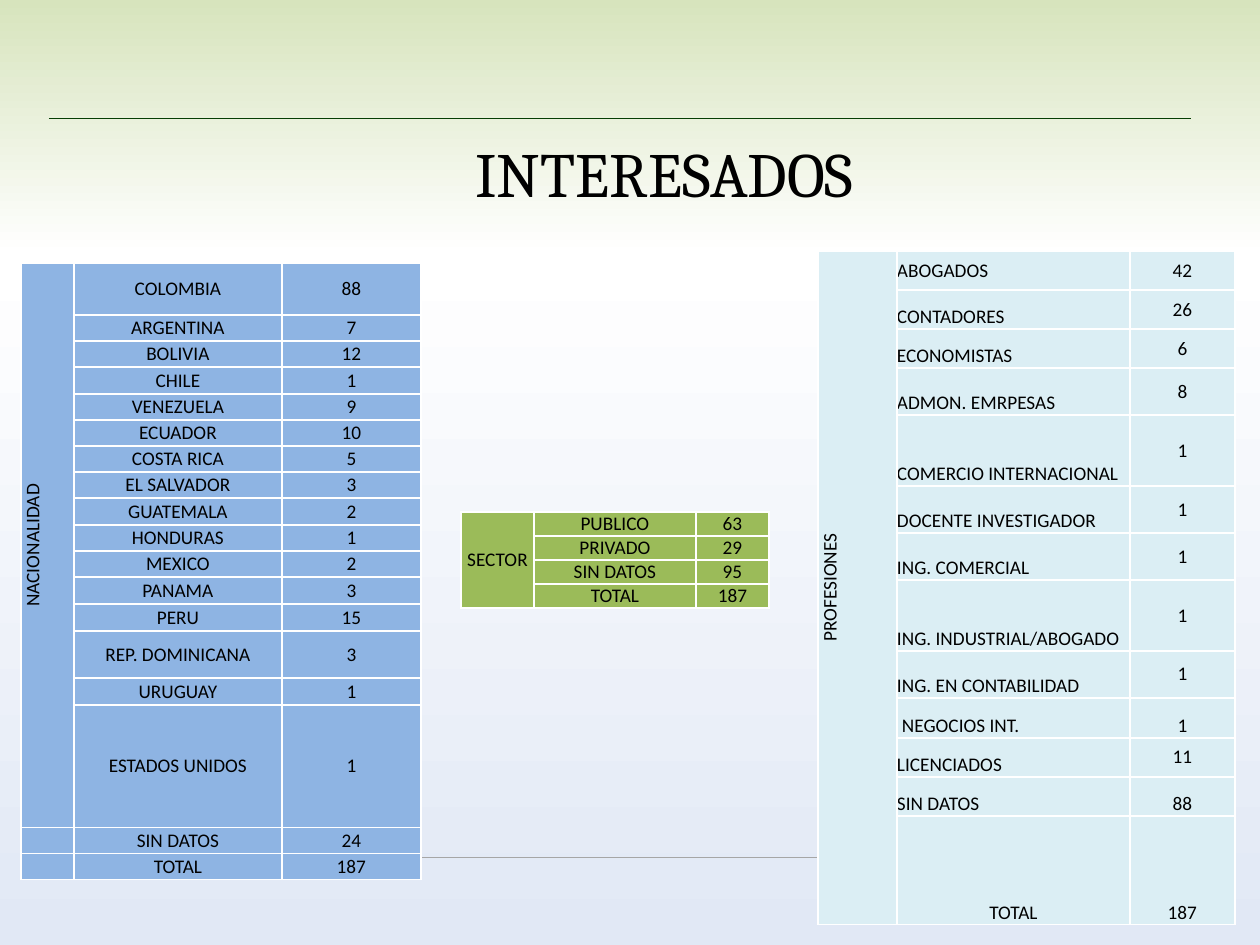
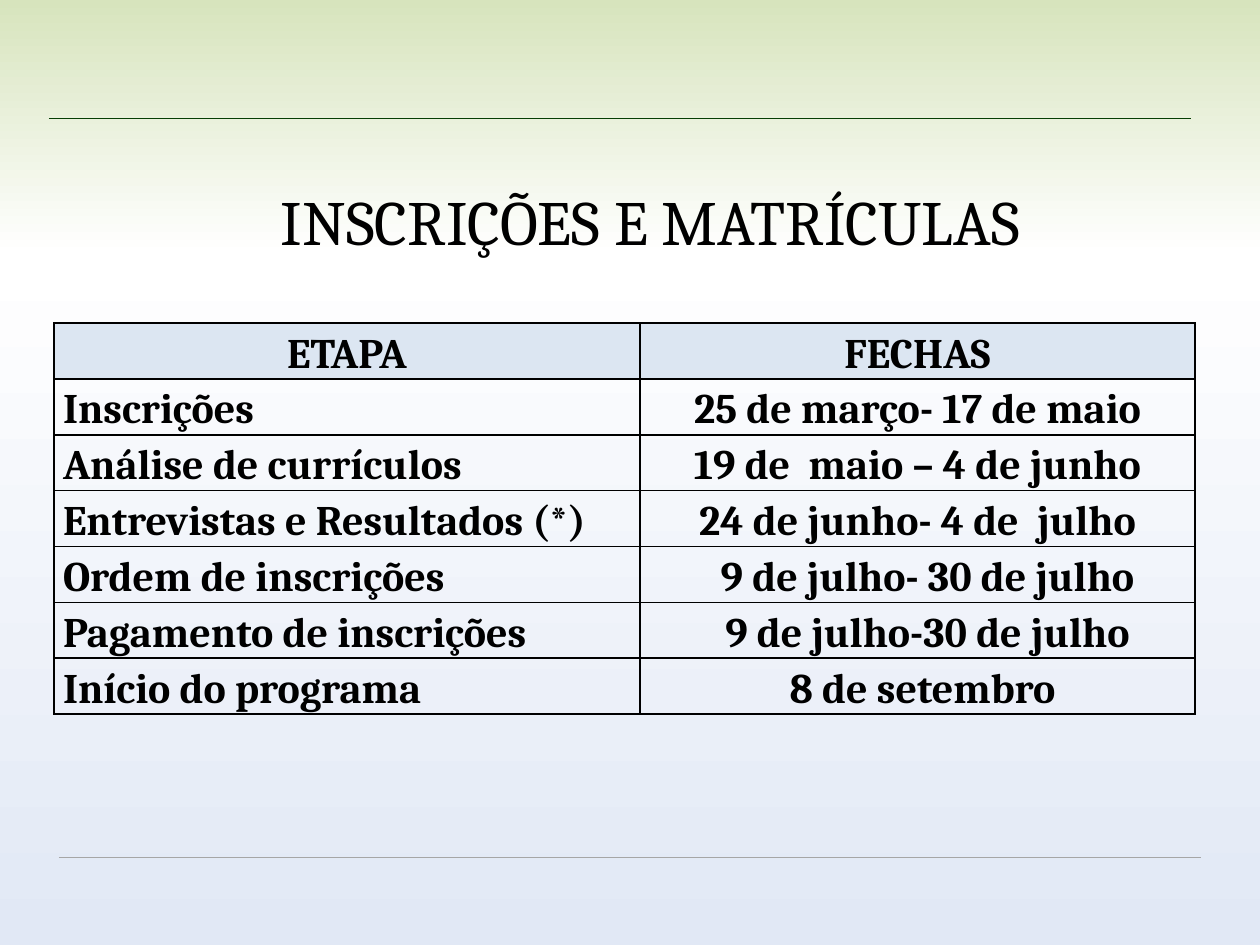
from copy import deepcopy
from lxml.etree import SubElement
from pptx import Presentation
from pptx.dml.color import RGBColor
from pptx.enum.shapes import MSO_CONNECTOR as Link
from pptx.enum.text import MSO_ANCHOR as Anchor, PP_ALIGN as Align
from pptx.oxml.ns import qn
from pptx.util import Inches, Pt

PX = 7257  # EMU per px, 126 px to the inch
hue = RGBColor.from_string
BLACK, WHITE = "000000", "FFFFFF"
BLUE, GREEN, AQUA, PALE = "8EB4E3", "9BBB59", "DBEEF4", "DCE6F2"


def grid(slide, left, top, cols, rows, data, fill, edge, font, size, pad=0):
    """Add a table with centred text, plain cells and thin borders."""
    frame = slide.shapes.add_table(len(rows), len(cols), left * PX, top * PX,
                                   sum(cols) * PX, sum(rows) * PX)
    table = frame.table
    table.first_row = table.horz_banding = False
    for col, width in zip(table.columns, cols):
        col.width = width * PX
    for row, height in zip(table.rows, rows):
        row.height = height * PX
    for row, texts in zip(table.rows, data):
        for cell, text in zip(row.cells, texts):
            cell.margin_left = cell.margin_right = pad * PX
            cell.margin_top = cell.margin_bottom = 0
            cell.vertical_anchor = Anchor.MIDDLE
            props = cell._tc.get_or_add_tcPr()
            for side in ("a:lnL", "a:lnR", "a:lnT", "a:lnB"):
                line = SubElement(props, qn(side), w="12700")
                solid = SubElement(line, qn("a:solidFill"))
                SubElement(solid, qn("a:srgbClr"), val=edge)
            if fill:
                cell.fill.solid()
                cell.fill.fore_color.rgb = hue(fill)
            else:
                cell.fill.background()
            cell.text_frame.text = text
            para = cell.text_frame.paragraphs[0]
            para.alignment = Align.CENTER
            for run in para.runs:
                run.font.name, run.font.size = font, Pt(size)
                run.font.color.rgb = hue(BLACK)
            if not text:
                SubElement(para._p, qn("a:endParaRPr"), sz=str(size * 100))
    return table


deck = Presentation()
deck.slide_width, deck.slide_height = Inches(10), Inches(7.5)
master = deck.slide_master

# Shared background
back = master.background.fill
back.gradient()
back.gradient_angle = 270
stops = back.gradient_stops
last = stops[1]._gs
last.addprevious(deepcopy(last))
shades = [(0, "D7E4BD"), (0.27, WHITE), (1, "E1E8F5")]
for stop, (place, shade) in zip(back.gradient_stops, shades):
    stop.position = place
    stop.color.rgb = hue(shade)

# Slides and titles
titles = [("INTERESADOS", 178, 133, 973, 78),
          ("INSCRIÇÕES E MATRÍCULAS", 154, 175, 993, 90)]
slides = []
for text, left, top, width, height in titles:
    slide = deck.slides.add_slide(deck.slide_layouts[5])
    title = slide.shapes.title
    title.left, title.top = left * PX, top * PX
    title.width, title.height = width * PX, height * PX
    title.text_frame.text = text
    title.text_frame.vertical_anchor = Anchor.MIDDLE
    para = title.text_frame.paragraphs[0]
    para.alignment = Align.CENTER
    font = para.runs[0].font
    font.name, font.size = "Cambria", Pt(36)
    font.color.rgb = hue(BLACK)
    slides.append(slide)
people, dates = slides

# Shared rules, moved to the master
for left, top, shade in [(59, 857, "A6A6A6"), (49, 118, "073E04")]:
    rule = people.shapes.add_connector(Link.STRAIGHT, left * PX, top * PX,
                                       (left + 1142) * PX, top * PX)
    rule.line.color.rgb = hue(shade)
    rule.line.width = Pt(0.25)
    SubElement(rule.element.spPr, qn("a:effectLst"))
    master.shapes.element.append(rule.element)

# Counts by nationality, sector and profession
nations = [("COLOMBIA", 88), ("ARGENTINA", 7), ("BOLIVIA", 12), ("CHILE", 1),
           ("VENEZUELA", 9), ("ECUADOR", 10), ("COSTA RICA", 5),
           ("EL SALVADOR", 3), ("GUATEMALA", 2), ("HONDURAS", 1),
           ("MEXICO", 2), ("PANAMA", 3), ("PERU", 15),
           ("REP. DOMINICANA", 3), ("URUGUAY", 1), ("ESTADOS UNIDOS", 1),
           ("SIN DATOS", 24), ("TOTAL", 187)]
sectors = [("PUBLICO", 63), ("PRIVADO", 29), ("SIN DATOS", 95), ("TOTAL", 187)]
jobs = [("ABOGADOS", 42), ("CONTADORES", 26), ("ECONOMISTAS", 6),
        ("ADMON. EMRPESAS", 8), ("COMERCIO INTERNACIONAL", 1),
        ("DOCENTE INVESTIGADOR", 1), ("ING. COMERCIAL", 1),
        ("ING. INDUSTRIAL/ABOGADO", 1), ("ING. EN CONTABILIDAD", 1),
        ("NEGOCIOS INT.", 1), ("LICENCIADOS", 11), ("SIN DATOS", 88),
        ("TOTAL", 187)]
tall = [52, 26, 26, 27, 26, 26, 26, 26, 27,
        26, 26, 27, 27, 47, 27, 122, 26, 26]
steps = [39, 39, 39, 47, 71, 47, 47, 71, 47, 40, 39, 39, 108]
groups = [
    ("NACIONALIDAD", nations, 16, 21, 263, [53, 208, 139], tall, BLUE),
    ("SECTOR", sectors, 4, 461, 512, [73, 162, 73], [24] * 4, GREEN),
    ("PROFESIONES", jobs, 13, 818, 251, [79, 233, 105], steps, AQUA),
]
for name, counts, span, left, top, cols, rows, fill in groups:
    data = [["" if i else name, label, str(count)]
            for i, (label, count) in enumerate(counts)]
    table = grid(people, left, top, cols, rows, data, fill, WHITE,
                 "Calibri", 11)
    head = table.cell(0, 0)
    head.merge(table.cell(span - 1, 0))
    if name != "SECTOR":
        head._tc.get_or_add_tcPr().set("vert", "vert270")

# Professions sit low and to the left
for i in range(len(jobs)):
    label, count = table.cell(i, 1), table.cell(i, 2)
    if i > 0:
        label.vertical_anchor = Anchor.BOTTOM
    if i < len(jobs) - 1:
        label.text_frame.paragraphs[0].alignment = Align.LEFT
    if i in (9, 11, 12):
        count.vertical_anchor = Anchor.BOTTOM
table.cell(9, 1).margin_left = 5 * PX

# Calendar
stages = [("ETAPA", "FECHAS"),
          ("Inscrições", "25 de março- 17 de maio"),
          ("Análise de currículos", "19 de  maio – 4 de junho"),
          ("Entrevistas e Resultados (*)", "24 de junho- 4 de  julho"),
          ("Ordem de inscrições", "9 de julho- 30 de julho"),
          ("Pagamento de inscrições", "9 de julho-30 de julho"),
          ("Início do programa", "8 de setembro")]
table = grid(dates, 54, 323, [586, 555], [56, 56, 55, 56, 56, 55, 56], stages,
             None, BLACK, "Cambria", 24, 9)
for i, row in enumerate(table.rows):
    for cell in row.cells:
        cell.vertical_anchor = Anchor.TOP
        para = cell.text_frame.paragraphs[0]
        para.line_spacing = 1.15
        para.runs[0].font.bold = True
        if i == 0:
            cell.fill.solid()
            cell.fill.fore_color.rgb = hue(PALE)
    if i > 0:
        row.cells[0].text_frame.paragraphs[0].alignment = Align.LEFT
for i, shift in [(4, 20), (5, 20), (6, 10)]:
    table.cell(i, 1).margin_left = (9 + shift) * PX

deck.save("out.pptx")
